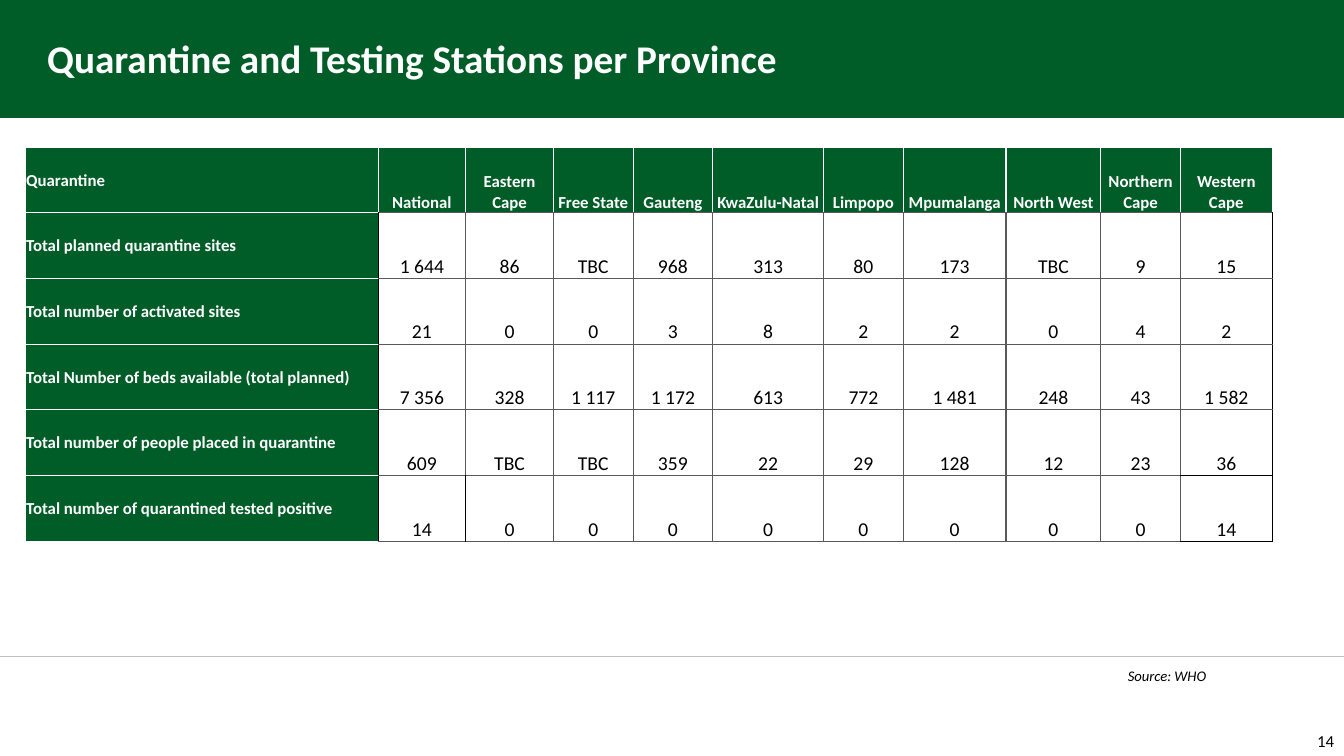
from lxml import etree
from pptx import Presentation
from pptx import util as u
from pptx.dml.color import RGBColor
from pptx.enum import shapes, text
from pptx.oxml import ns

GREEN, WHITE, BLACK, GREY, SILVER = "005D28", "FFFFFF", "000000", "595959", "BFBFBF"
LEFT, CENTER, RIGHT = text.PP_ALIGN.LEFT, text.PP_ALIGN.CENTER, text.PP_ALIGN.RIGHT
MIDDLE, BOTTOM = text.MSO_ANCHOR.MIDDLE, text.MSO_ANCHOR.BOTTOM

COLUMN_WIDTHS = [3.5, 0.87, 0.87, 0.79, 0.79, 1.1, 0.79, 1.02, 0.94, 0.79, 0.91]
STATIONS = [
    ["Quarantine", "National", "Eastern Cape", "Free State", "Gauteng", "KwaZulu-Natal",
     "Limpopo", "Mpumalanga", "North West", "Northern Cape", "Western Cape"],
    ["Total planned quarantine sites",
     "1 644", "86", "TBC", "968", "313", "80", "173", "TBC", "9", "15"],
    ["Total number of activated sites",
     "21", "0", "0", "3", "8", "2", "2", "0", "4", "2"],
    ["Total Number of beds available (total planned)",
     "7 356", "328", "1 117", "1 172", "613", "772", "1 481", "248", "43", "1 582"],
    ["Total number of people placed in quarantine",
     "609", "TBC", "TBC", "359", "22", "29", "128", "12", "23", "36"],
    ["Total number of quarantined tested positive",
     "14", "0", "0", "0", "0", "0", "0", "0", "0", "14"],
]


def rgb(value):
    """Turn a hex string into a colour."""
    return RGBColor.from_string(value)


def border_colors(row, column):
    """Give the left, right, top and bottom border colours of a table cell."""
    last_row, last_column = len(STATIONS) - 1, len(COLUMN_WIDTHS) - 1
    if row == 0:
        return WHITE, WHITE, WHITE, GREY if column else WHITE
    if column == 0:
        return WHITE, BLACK, WHITE, WHITE
    corner = row == last_row and column <= 2
    left = BLACK if column == 1 or corner else GREY
    right = BLACK if column == last_column or (corner and column == 1) else GREY
    top = BLACK if column == last_column and row == last_row else GREY
    bottom = BLACK if column == last_column and row >= last_row - 1 else GREY
    return left, right, top, bottom


class Slide:
    """Holds the type style and the page being drawn."""

    def __init__(self, deck, font="Calibri"):
        """Add a blank page to the deck."""
        self.page = deck.slides.add_slide(deck.slide_layouts[6])
        self.font = font

    def add_words(self, frame, words, size, color, align, bold=False, italic=False):
        """Put one run in the first paragraph of a text frame."""
        para = frame.paragraphs[0]
        para.alignment = align
        span = para.add_run()
        span.text = words
        span.font.name, span.font.size = self.font, u.Pt(size)
        span.font.bold, span.font.italic = bold, italic
        span.font.color.rgb = rgb(color)

    def band(self, left, top, width, height, color):
        """Draw a plain filled rectangle."""
        box = self.page.shapes.add_shape(
            shapes.MSO_SHAPE.RECTANGLE, *map(u.Inches, (left, top, width, height)))
        box.shadow.inherit = False
        box.fill.solid()
        box.fill.fore_color.rgb = rgb(color)
        box.line.fill.background()

    def rule(self, left, top, right, color, weight):
        """Draw a horizontal line."""
        line = self.page.shapes.add_connector(
            shapes.MSO_CONNECTOR.STRAIGHT, *map(u.Inches, (left, top, right, top)))
        line.line.color.rgb = rgb(color)
        line.line.width = u.Pt(weight)
        etree.SubElement(line._element.spPr, ns.qn("a:effectLst"))

    def label(self, place, words, size, color, align, anchor=MIDDLE, **style):
        """Place a wrapped text box."""
        box = self.page.shapes.add_textbox(*map(u.Inches, place))
        box.text_frame.word_wrap = True
        box.text_frame.vertical_anchor = anchor
        self.add_words(box.text_frame, words, size, color, align, **style)

    def borders(self, cell, colors):
        """Draw the four borders of a cell."""
        properties = cell._tc.get_or_add_tcPr()
        for side, color in zip("LRTB", colors):
            edge = etree.SubElement(properties, ns.qn("a:ln" + side), w=str(u.Pt(1)))
            fill = etree.SubElement(edge, ns.qn("a:solidFill"))
            etree.SubElement(fill, ns.qn("a:srgbClr"), val=color)

    def table(self, left, top, height, widths, rows):
        """Draw a table with a green header row and label column."""
        grid = self.page.shapes.add_table(
            len(rows), len(widths),
            *map(u.Inches, (left, top, sum(widths), height))).table
        grid.first_row = grid.horz_banding = False
        for column, width in zip(grid.columns, widths):
            column.width = u.Inches(width)
        for r, row in enumerate(rows):
            for c, words in enumerate(row):
                cell = grid.cell(r, c)
                cell.margin_left = cell.margin_right = cell.margin_top = u.Inches(0.01)
                cell.margin_bottom = 0
                cell.vertical_anchor = BOTTOM if c else MIDDLE
                self.borders(cell, border_colors(r, c))
                heading = r == 0 or c == 0
                if heading:
                    cell.fill.solid()
                    cell.fill.fore_color.rgb = rgb(GREEN)
                else:
                    cell.fill.background()
                self.add_words(cell.text_frame, words, 12 if heading else 14,
                               WHITE if heading else BLACK, CENTER if c else LEFT,
                               bold=heading)


def main():
    """Build the quarantine stations slide."""
    deck = Presentation()
    deck.slide_width, deck.slide_height = u.Inches(13.33), u.Inches(7.5)
    slide = Slide(deck)
    slide.band(0, 0, 13.33, 1.17, GREEN)
    slide.rule(0, 6.51, 13.33, SILVER, 0.75)
    slide.label((12.86, 7.22, 0.47, 0.28), "14", 12, BLACK, RIGHT, BOTTOM)
    slide.label((0.37, 0.13, 12.13, 0.88), "Quarantine and Testing Stations per Province",
                28, WHITE, LEFT, bold=True)
    slide.label((10.29, 6.43, 2.57, 0.55), "Source: WHO", 10.5, BLACK, CENTER, italic=True)
    slide.table(0.25, 1.46, 3.91, COLUMN_WIDTHS, STATIONS)
    deck.save("out.pptx")


if __name__ == "__main__":
    main()
